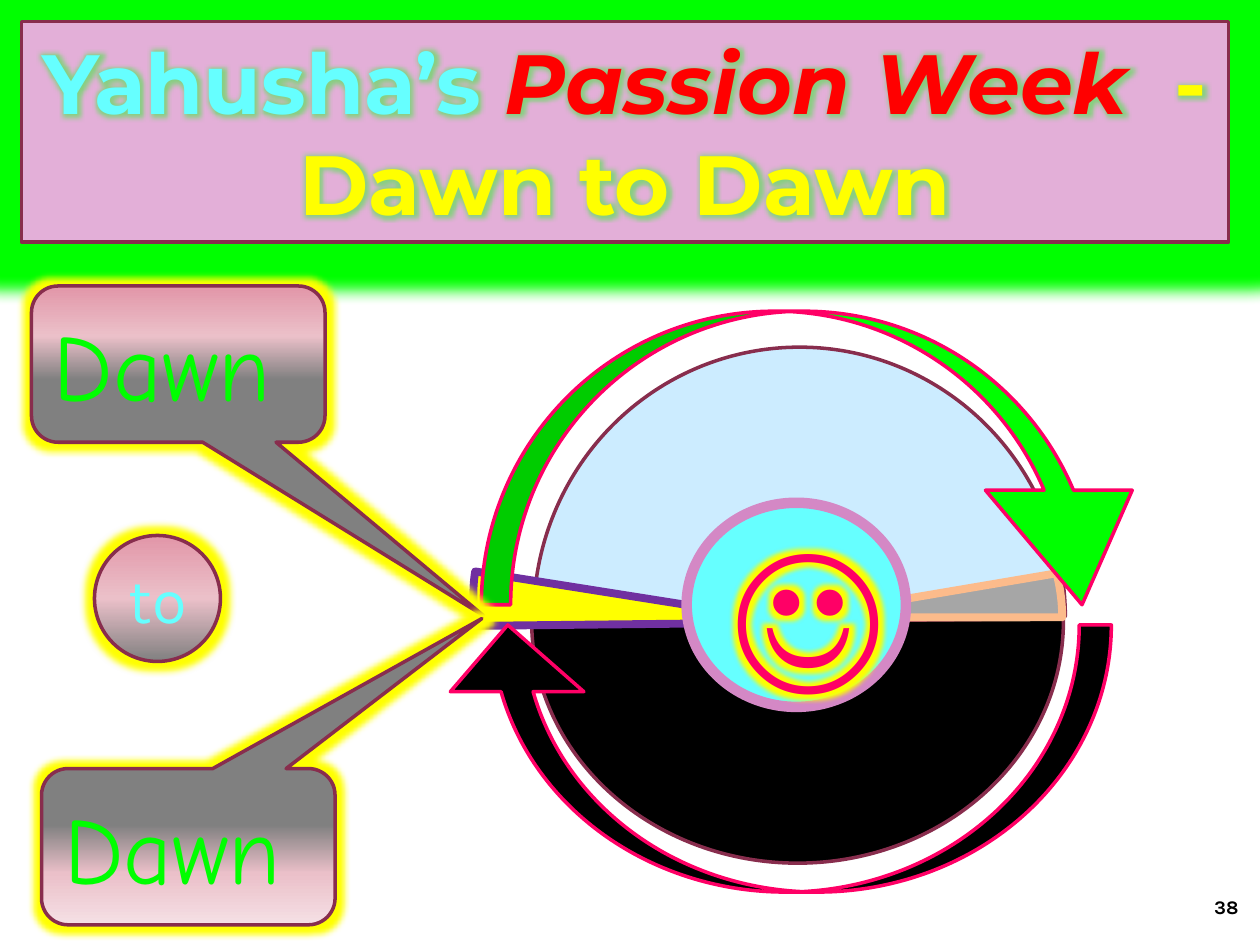
from pptx import Presentation
from pptx.dml.color import RGBColor
from pptx.enum.shapes import MSO_SHAPE
from pptx.enum.text import MSO_ANCHOR, PP_ALIGN
from pptx.oxml import parse_xml
from pptx.oxml.ns import qn
from pptx.util import Inches, Pt

PIE, OVAL, BANNER = MSO_SHAPE.PIE, MSO_SHAPE.OVAL, MSO_SHAPE.RECTANGLE
CALLOUT = MSO_SHAPE.ROUNDED_RECTANGULAR_CALLOUT
DOWN_ARROW, UP_ARROW = MSO_SHAPE.CURVED_DOWN_ARROW, MSO_SHAPE.CURVED_UP_ARROW
MIDDLE, BOTTOM = MSO_ANCHOR.MIDDLE, MSO_ANCHOR.BOTTOM
CENTER, RIGHT = PP_ALIGN.CENTER, PP_ALIGN.RIGHT

NS = 'xmlns:a="http://schemas.openxmlformats.org/drawingml/2006/main"'
SOLID = '<a:solidFill><a:srgbClr val="{}"/></a:solidFill>'
GLOW = ('<a:effectLst ' + NS + '><a:glow rad="{}"><a:srgbClr val="{}">'
        '<a:alpha val="{}"/></a:srgbClr></a:glow></a:effectLst>')
STOP = '<a:gs ' + NS + ' pos="{}"><a:srgbClr val="{}"/></a:gs>'
PLUM, PINK, LIME, YELLOW, AQUA = "882D4D", "FF0066", "00FF00", "FFFF00", "66FFFF"
ROSE, BLUSH, GREY = "E296A8", "EBC0C9", "808080"
color = RGBColor.from_string

deck = Presentation()
deck.slide_width, deck.slide_height = Inches(10), Inches(7.5)
page = deck.slides.add_slide(deck.slide_layouts[6])


def add_figure(kind, place, fill, line, width, adjustments=(), turn=0, glow=None):
    """Add a preset shape; fill is a colour or a list of (position, colour) stops."""
    shape = page.shapes.add_shape(kind, *[Inches(length) for length in place])
    shape.rotation = turn
    for index, value in enumerate(adjustments):
        shape.adjustments[index] = value
    if isinstance(fill, str):
        shape.fill.solid()
        shape.fill.fore_color.rgb = color(fill)
    else:
        shape.fill.gradient()
        shape.fill.gradient_angle = 270
        stops = shape._element.spPr.find(".//" + qn("a:gsLst"))
        stops.clear()
        for position, stop in fill:
            stops.append(parse_xml(STOP.format(position * 1000, stop)))
    shape.line.color.rgb = color(line)
    shape.line.width = Pt(width)
    shape.shadow.inherit = False
    if glow:
        effects = shape._element.spPr.find(qn("a:effectLst"))
        effects.append(parse_xml(GLOW.format(Pt(glow[0]), *glow[1:]))[0])
    return shape


def write(box, runs, font, size, bold=False, align=CENTER, anchor=MIDDLE, glow=None):
    """Write one paragraph of (text, colour, italic, outline) runs."""
    frame = box.text_frame
    frame.word_wrap = True
    frame.vertical_anchor = anchor
    para = frame.paragraphs[0]
    para.alignment = align
    for text, ink, italic, outline in runs:
        span = para.add_run()
        span.text = text
        span.font.name, span.font.size = font, Pt(size)
        span.font.bold, span.font.italic = bold, italic
        span.font.color.rgb = color(ink)
        properties = span._r.get_or_add_rPr()
        if glow:
            properties.find(qn("a:solidFill")).addnext(
                parse_xml(GLOW.format(Pt(glow[0]), *glow[1:])))
        if outline:
            properties.insert(0, parse_xml(
                f'<a:ln {NS} w="{Pt(outline[1])}">{SOLID.format(outline[0])}</a:ln>'))


# Slide number
number = page.shapes.add_textbox(Inches(9.19), Inches(7.04), Inches(0.64), Inches(0.25))
frame = number.text_frame
frame.margin_left = frame.margin_right = frame.margin_top = frame.margin_bottom = 0
write(number, [("38", "000000", False, None)], "Karla", 11, True, RIGHT, BOTTOM)

# Day, night and dusk slices of the circle
add_figure(PIE, (4.2, 2.79, 4.29, 4.22), "CCECFF", PLUM, 2, (54, 161.84), 90)
add_figure(PIE, (4.41, 2.82, 3.84, 4.22), "000000", PLUM, 2, (53.68, 162), 270)
add_figure(PIE, (4.62, 2.79, 3.4, 4.22), "A6A6A6", "FCBB8B", 4.5, (156.24, 162), 90)

# Title banner
title = add_figure(BANNER, (0.17, 0.17, 9.58, 1.75), "E3AFD8", PLUM, 2,
                   glow=(18, LIME, 100000))
write(title, [("Yahusha’s ", AQUA, False, ("483BF3", 3)),
              ("Passion Week  ", "FF0000", True, ("E36406", 0.75)),
              ("- Dawn to Dawn", YELLOW, False, None)],
      "Montserrat", 48, True, glow=(8, LIME, 40000))

# Dawn slice and the arrows round the circle
add_figure(PIE, (4.57, 2.35, 3.52, 5.18), YELLOW, "7030A0", 4.5, (156.24, 162), 279)
add_figure(DOWN_ARROW, (3.82, 2.47, 5.35, 2.33), LIME, PINK, 2, (0.1, 0.5, 0.39))
night_arrow = add_figure(UP_ARROW, (3.5, 4.96, 5.32, 2.12), "000000", PINK, 2,
                         (0.12, 0.5, 0.25))
night_arrow._element.spPr.find(qn("a:xfrm")).set("flipH", "1")

# Labels from dawn to dawn
yellow_glow = (8, YELLOW, 100000)
labels = [
    (CALLOUT, (0.25, 2.27, 2.33, 1.24), [(0, ROSE), (32, BLUSH), (60, GREY)],
     (1.04, 1.61, 0.17), "Dawn ", "Comic Neue", 54, LIME),
    (OVAL, (0.75, 4.25, 1, 1), [(0, ROSE), (50, BLUSH), (100, GREY)],
     (), "to", "Karla", 36, AQUA),
    (CALLOUT, (0.33, 6.1, 2.33, 1.24), [(36, GREY), (67, BLUSH), (100, "F5E0E5")],
     (1, -1.46, 0.17), "Dawn ", "Comic Neue", 54, LIME),
]
for kind, place, stops, adjustments, text, font, size, ink in labels:
    label = add_figure(kind, place, stops, PLUM, 2, adjustments, glow=yellow_glow)
    write(label, [(text, ink, False, None)], font, size)

# Smiling centre
center = add_figure(OVAL, (5.45, 3.99, 1.74, 1.62), AQUA, "D488C5", 6)
write(center, [("☺", PINK, False, ("000000", 0.75))], "Karla", 96, glow=yellow_glow)

deck.save("out.pptx")
